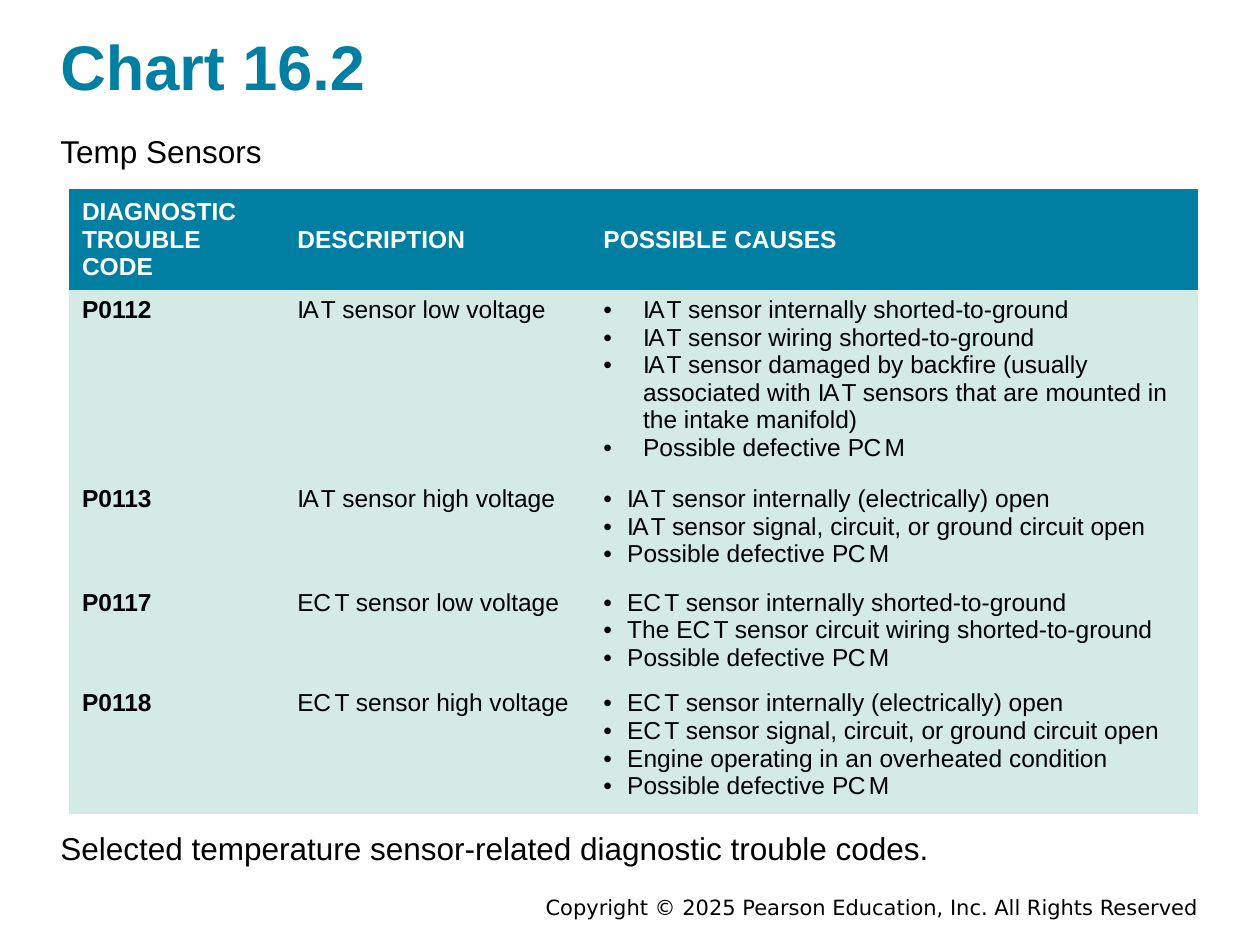
"""Build a slide with a table of temperature sensor trouble codes."""
from dataclasses import dataclass

from lxml import etree
from pptx import Presentation
from pptx.dml.color import RGBColor
from pptx.enum.text import MSO_ANCHOR, PP_ALIGN
from pptx.oxml.ns import qn
from pptx.util import Cm, Pt

MID, TOP = MSO_ANCHOR.MIDDLE, MSO_ANCHOR.TOP
LEFT, RIGHT = PP_ALIGN.LEFT, PP_ALIGN.RIGHT
PLAIN = "{2D5ABB26-0587-4C30-8999-92F81FD0307C}"


@dataclass(frozen=True)
class Theme:
    """Fonts, colours and type sizes."""
    font: str = "Arial"
    legal: str = "DejaVu Sans"
    teal: str = "007FA3"
    mint: str = "D4EAE4"
    ink: str = "000000"
    white: str = "FFFFFF"
    title: int = 36
    body: int = 18
    cell: int = 14
    foot: int = 12


THEME = Theme()
TIGHT = "-200"

# Letters between tildes are set tight.
TEXTS = [
    ("Copyright © 2025 Pearson Education, Inc. All Rights Reserved",
     (7.57, 17.98, 16.59, 0.61), 0.05, RIGHT,
     (THEME.foot, THEME.ink, False, THEME.legal)),
    ("Chart 16.2", (1.22, 0.41, 23.09, 1.8), 0.13, LEFT,
     (THEME.title, THEME.teal, True)),
    ("Temp Sensors", (1.22, 2.54, 23.09, 1.02), 0.13, LEFT,
     (THEME.body, THEME.ink)),
    ("Selected temperature sensor-related diagnostic trouble codes.",
     (1.22, 16.59, 23.09, 1.02), 0.13, LEFT, (THEME.body, THEME.ink)),
]
HEADS = ["DIAGNOSTIC TROUBLE CODE", "DESCRIPTION", "POSSIBLE CAUSES"]
PCM = "Possible defective ~P C ~M"
CODES = [
    ("P0112", "~I A ~T sensor low voltage", 0.8, [
        "~I A ~T sensor internally shorted-to-ground",
        "~I A ~T sensor wiring shorted-to-ground",
        "~I A ~T sensor damaged by backfire (usually associated with "
        "~I A ~T sensors that are mounted in the intake manifold)",
        PCM]),
    ("P0113", "~I A ~T sensor high voltage", 0.48, [
        "~I A ~T sensor internally (electrically) open",
        "~I A ~T sensor signal, circuit, or ground circuit open",
        PCM]),
    ("P0117", "~E C ~T sensor low voltage", 0.48, [
        "~E C ~T sensor internally shorted-to-ground",
        "The ~E C ~T sensor circuit wiring shorted-to-ground",
        PCM]),
    ("P0118", "~E C ~T sensor high voltage", 0.48, [
        "~E C ~T sensor internally (electrically) open",
        "~E C ~T sensor signal, circuit, or ground circuit open",
        "Engine operating in an overheated condition",
        PCM]),
]
SPOT = (1.4, 3.81)
COLS = [4.34, 6.17, 12.24]
ROWS = [2.04, 3.81, 2.08, 2.03, 2.61]


def write(para, text, size, ink, bold=False, font=THEME.font):
    """Add the text run by run, with tight letters between tildes."""
    for i, part in enumerate(text.split("~")):
        if not part:
            continue
        run = para.add_run()
        run.text = part
        run.font.size = Pt(size)
        run.font.name = font
        run.font.bold = bold
        run.font.color.rgb = RGBColor.from_string(ink)
        if i % 2:
            run.font._element.set("spc", TIGHT)


def bullet(para, dent):
    """Give the paragraph a hanging bullet."""
    props = para._p.get_or_add_pPr()
    props.set("marL", str(Cm(dent)))
    props.set("indent", str(-Cm(dent)))
    face = etree.SubElement(props, qn("a:buFont"))
    face.set("typeface", THEME.font)
    etree.SubElement(props, qn("a:buChar")).set("char", "•")


def label(slide, text, place, pad, align, style):
    """Add one line of text in its own box."""
    box = slide.shapes.add_textbox(*map(Cm, place))
    frame = box.text_frame
    frame.word_wrap = True
    frame.vertical_anchor = MID
    frame.margin_left = frame.margin_right = 0
    frame.margin_top = frame.margin_bottom = Cm(pad)
    para = frame.paragraphs[0]
    para.alignment = align
    write(para, text, *style)


def fill(cell, lines, back, ink, bold=False, anchor=TOP, dent=0):
    """Fill one cell with its lines of text."""
    cell.fill.solid()
    cell.fill.fore_color.rgb = RGBColor.from_string(back)
    cell.vertical_anchor = anchor
    frame = cell.text_frame
    for i, line in enumerate(lines):
        para = frame.add_paragraph() if i else frame.paragraphs[0]
        if dent:
            bullet(para, dent)
        write(para, line, THEME.cell, ink, bold)


def grid(slide):
    """Add the table of trouble codes."""
    size = (sum(COLS), sum(ROWS))
    table = slide.shapes.add_table(
        len(ROWS), len(COLS), *map(Cm, SPOT + size)).table
    table.horz_banding = False
    table._tbl.tblPr.find(qn("a:tableStyleId")).text = PLAIN
    for col, width in zip(table.columns, COLS):
        col.width = Cm(width)
    for row, height in zip(table.rows, ROWS):
        row.height = Cm(height)
    for i, head in enumerate(HEADS):
        fill(table.cell(0, i), [head], THEME.teal, THEME.white, True, MID)
    for i, (code, note, dent, causes) in enumerate(CODES, 1):
        fill(table.cell(i, 0), [code], THEME.mint, THEME.ink, True)
        fill(table.cell(i, 1), [note], THEME.mint, THEME.ink)
        fill(table.cell(i, 2), causes, THEME.mint, THEME.ink, dent=dent)


def main():
    """Build and save the slide."""
    deck = Presentation()
    deck.slide_width, deck.slide_height = Cm(25.4), Cm(19.05)
    slide = deck.slides.add_slide(deck.slide_layouts[6])
    for item in TEXTS:
        label(slide, *item)
    grid(slide)
    deck.save("out.pptx")


if __name__ == "__main__":
    main()
